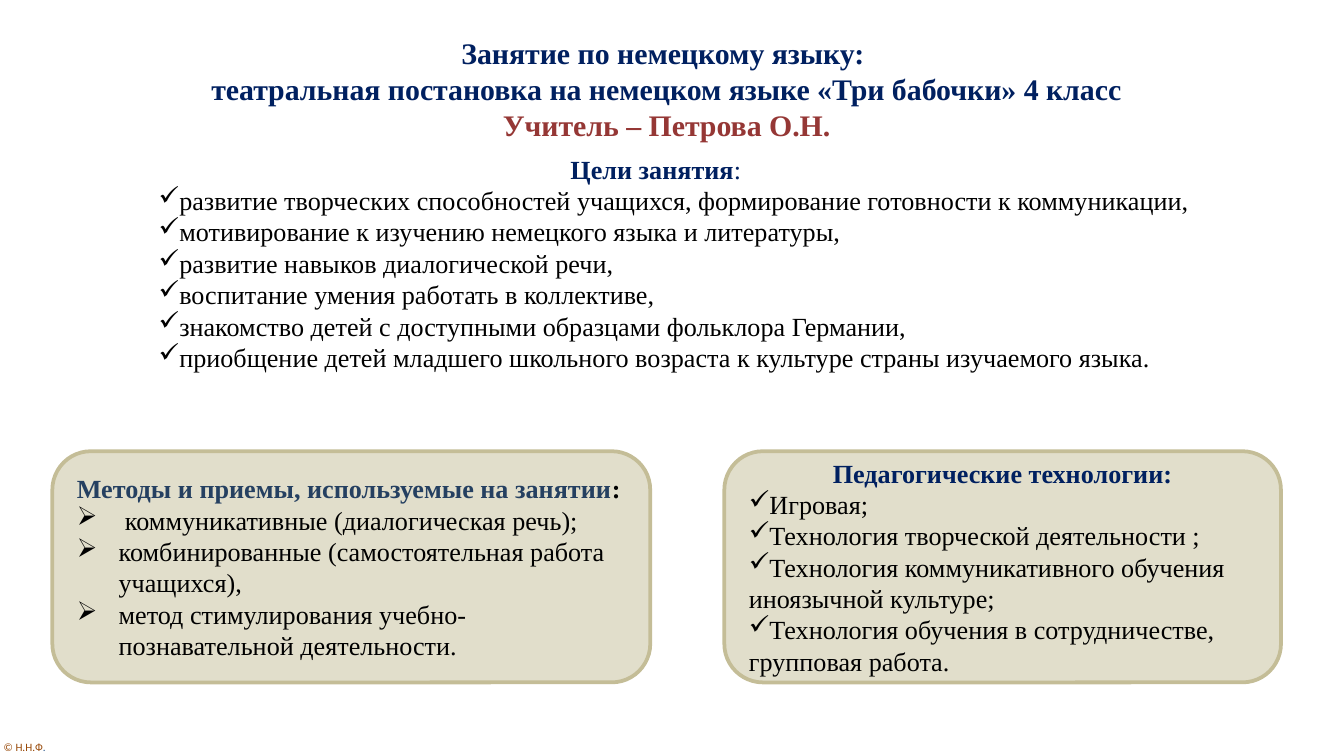
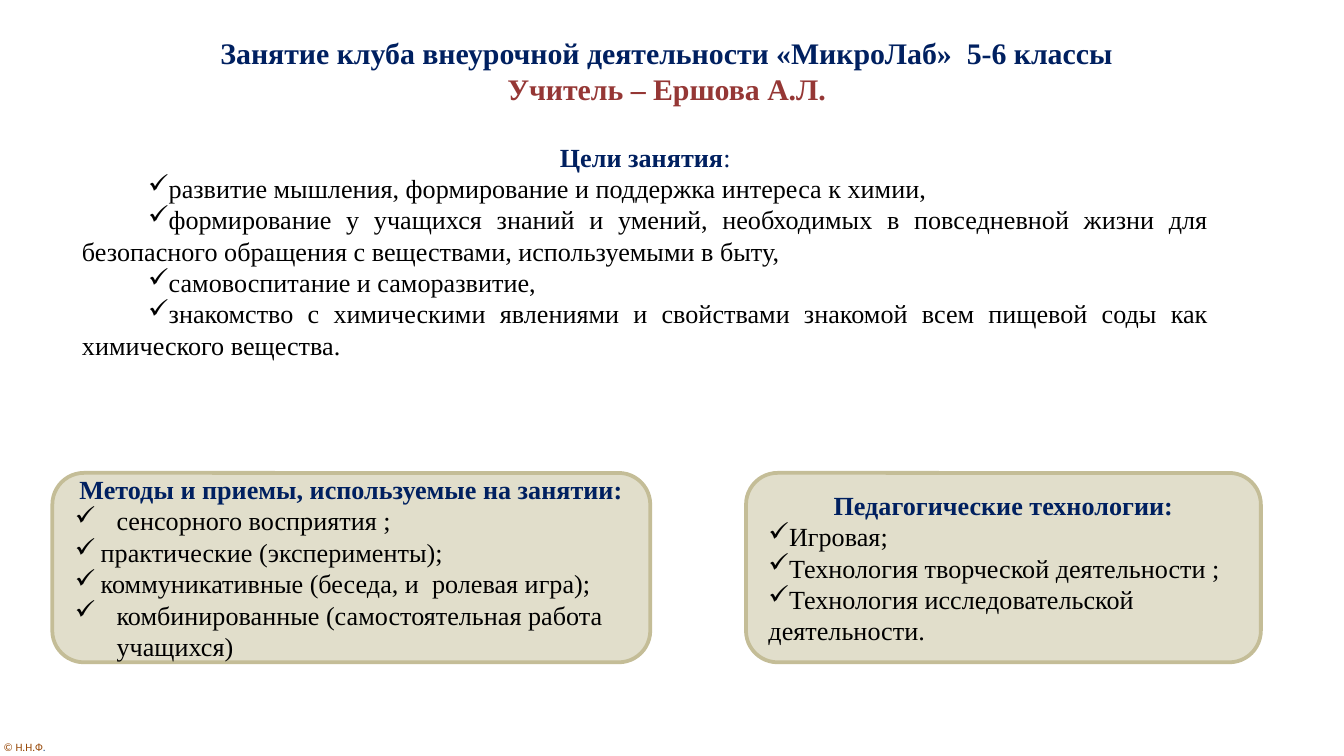
from lxml.etree import SubElement
from pptx import Presentation
from pptx.dml.color import RGBColor
from pptx.enum.shapes import MSO_SHAPE
from pptx.enum.text import MSO_ANCHOR, MSO_AUTO_SIZE, PP_ALIGN
from pptx.oxml.ns import qn
from pptx.util import Cm, Pt

NAVY, RED, STEEL, BLACK = "002060", "953735", "254061", "000000"
BROWN, BLUE, SAND, SAND_EDGE = "984807", "376092", "DDD9C3", "C4BD97"
SERIF, SANS = "Times New Roman", "Calibri"
CHECK, ARROW = "✓", "➢"
LEFT, CENTER, JUSTIFY = PP_ALIGN.LEFT, PP_ALIGN.CENTER, PP_ALIGN.JUSTIFY

# Content: places are left, top, width, height in cm;
# card items are text, bullet, hanging indent in cm
LESSONS = [
    {
        "title": ["Занятие по немецкому языку: ",
                  "театральная постановка на немецком языке «Три бабочки» 4 класс"],
        "teacher": "Учитель – Петрова О.Н.",
        "title_height": 2.31,
        "goals_place": (1.5, 2.77, 21.79, 4.95),
        "goals": [
            "развитие творческих способностей учащихся, формирование готовности к коммуникации,",
            "мотивирование к изучению немецкого языка и литературы,",
            "развитие навыков диалогической речи,",
            "воспитание умения работать в коллективе,",
            "знакомство детей с доступными образцами фольклора Германии,",
            "приобщение детей младшего школьного возраста к культуре страны изучаемого языка.",
        ],
        "cards": [
            {"place": (0.99, 8.53, 11.3, 4.37),
             "heading": [("Методы и приемы, используемые на занятии", STEEL), (":", BLACK)],
             "align": LEFT,
             "items": [
                 ("коммуникативные (диалогическая речь);", ARROW, 0.91),
                 ("комбинированные (самостоятельная работа учащихся),", ARROW, 0.79),
                 ("метод стимулирования учебно-познавательной деятельности.", ARROW, 0.79)]},
            {"place": (13.69, 8.53, 10.52, 4.37),
             "heading": [("Педагогические технологии:", NAVY)],
             "align": CENTER,
             "items": [
                 ("Игровая;", CHECK, 0),
                 ("Технология творческой деятельности ;", CHECK, 0),
                 ("Технология коммуникативного обучения иноязычной культуре;", CHECK, 0),
                 ("Технология обучения в сотрудничестве, групповая работа.", CHECK, 0)]},
        ],
    },
    {
        "title": ["Занятие клуба внеурочной деятельности «МикроЛаб»  5-6 классы"],
        "teacher": "Учитель – Ершова А.Л.",
        "title_height": 1.63,
        "goals_place": (1.3, 2.54, 21.79, 4.8),
        "goals": [
            "развитие мышления, формирование и поддержка интереса к химии,",
            "формирование у учащихся знаний и умений, необходимых в повседневной жизни "
            "для безопасного обращения с веществами, используемыми в быту,",
            "самовоспитание и саморазвитие,",
            "знакомство с химическими явлениями и свойствами знакомой всем пищевой соды "
            "как химического вещества.",
        ],
        "cards": [
            {"place": (0.99, 8.94, 11.3, 3.58),
             "heading": [("Методы и приемы, используемые на занятии:", NAVY)],
             "align": CENTER,
             "items": [
                 ("сенсорного восприятия ;", CHECK, 0.79),
                 ("практические (эксперименты);", CHECK, 0.49),
                 ("коммуникативные (беседа, и  ролевая игра);", CHECK, 0.49),
                 ("комбинированные (самостоятельная работа учащихся)", CHECK, 0.79)]},
            {"place": (14.1, 8.94, 9.73, 3.58),
             "heading": [("Педагогические технологии:", NAVY)],
             "align": CENTER,
             "items": [
                 ("Игровая;", CHECK, 0),
                 ("Технология творческой деятельности ;", CHECK, 0),
                 ("Технология исследовательской деятельности.", CHECK, 0)]},
        ],
    },
]

TITLE = {"size": Pt(16), "name": SERIF, "bold": True}
HEADING = {"size": Pt(14), "name": SERIF, "bold": True}
BODY = {"size": Pt(14), "name": SERIF, "bold": False}
FOOTER = {"size": Pt(6), "name": SANS, "bold": False}


def rgb(value):
    return RGBColor.from_string(value)


def in_cm(place):
    return [Cm(length) for length in place]


def add_line(frame, runs, align=LEFT, bullet=None, margin=0, indent=0):
    """Add a paragraph; runs are (text, colour, format) triples."""
    line = frame.paragraphs[0]
    if line.runs:
        line = frame.add_paragraph()
    line.alignment = align
    if bullet:
        properties = line._p.get_or_add_pPr()
        properties.set("marL", str(Cm(margin)))
        properties.set("indent", str(Cm(indent)))
        SubElement(properties, qn("a:buChar"), char=bullet)
    for text, colour, style in runs:
        run = line.add_run()
        run.text = text
        for key, value in style.items():
            setattr(run.font, key, value)
        run.font.color.rgb = rgb(colour)


def add_text(slide, place, wrap=True):
    frame = slide.shapes.add_textbox(*in_cm(place)).text_frame
    frame.word_wrap = wrap
    return frame


def add_footer(slide):
    frame = add_text(slide, (-0.18, 13.87, 1.32, 0.51), wrap=False)
    add_line(frame, [("© Н.Н.Ф", BROWN, FOOTER), (".", BLUE, FOOTER)])


def add_title(slide, lesson):
    frame = add_text(slide, (1.3, 0.53, 22.6, lesson["title_height"]))
    frame.auto_size = MSO_AUTO_SIZE.SHAPE_TO_FIT_TEXT
    for text in lesson["title"]:
        add_line(frame, [(text, NAVY, TITLE)], CENTER)
    add_line(frame, [(lesson["teacher"], RED, TITLE)], CENTER)


def add_goals(slide, lesson):
    frame = add_text(slide, lesson["goals_place"])
    add_line(frame, [("Цели занятия", NAVY, HEADING), (":", NAVY, BODY)], CENTER)
    for goal in lesson["goals"]:
        add_line(frame, [(goal, BLACK, BODY)], JUSTIFY, CHECK, indent=1.25)


def add_card(slide, card):
    panel = slide.shapes.add_shape(MSO_SHAPE.ROUNDED_RECTANGLE, *in_cm(card["place"]))
    panel.shadow.inherit = False
    panel.fill.solid()
    panel.fill.fore_color.rgb = rgb(SAND)
    tint = panel._element.spPr.find(qn("a:solidFill")).find(qn("a:srgbClr"))
    SubElement(tint, qn("a:alpha"), val="86000")
    panel.line.color.rgb = rgb(SAND_EDGE)
    panel.line.width = Pt(2)

    frame = panel.text_frame
    frame.word_wrap = True
    frame.vertical_anchor = MSO_ANCHOR.MIDDLE
    add_line(frame, [(text, colour, HEADING) for text, colour in card["heading"]],
             card["align"])
    for text, bullet, hang in card["items"]:
        add_line(frame, [(text, BLACK, BODY)], LEFT, bullet, hang, -hang)


def main():
    deck = Presentation()
    deck.slide_width, deck.slide_height = Cm(25.4), Cm(14.29)
    for lesson in LESSONS:
        slide = deck.slides.add_slide(deck.slide_layouts[6])
        add_footer(slide)
        add_title(slide, lesson)
        add_goals(slide, lesson)
        for card in lesson["cards"]:
            add_card(slide, card)
    deck.save("out.pptx")


if __name__ == "__main__":
    main()
